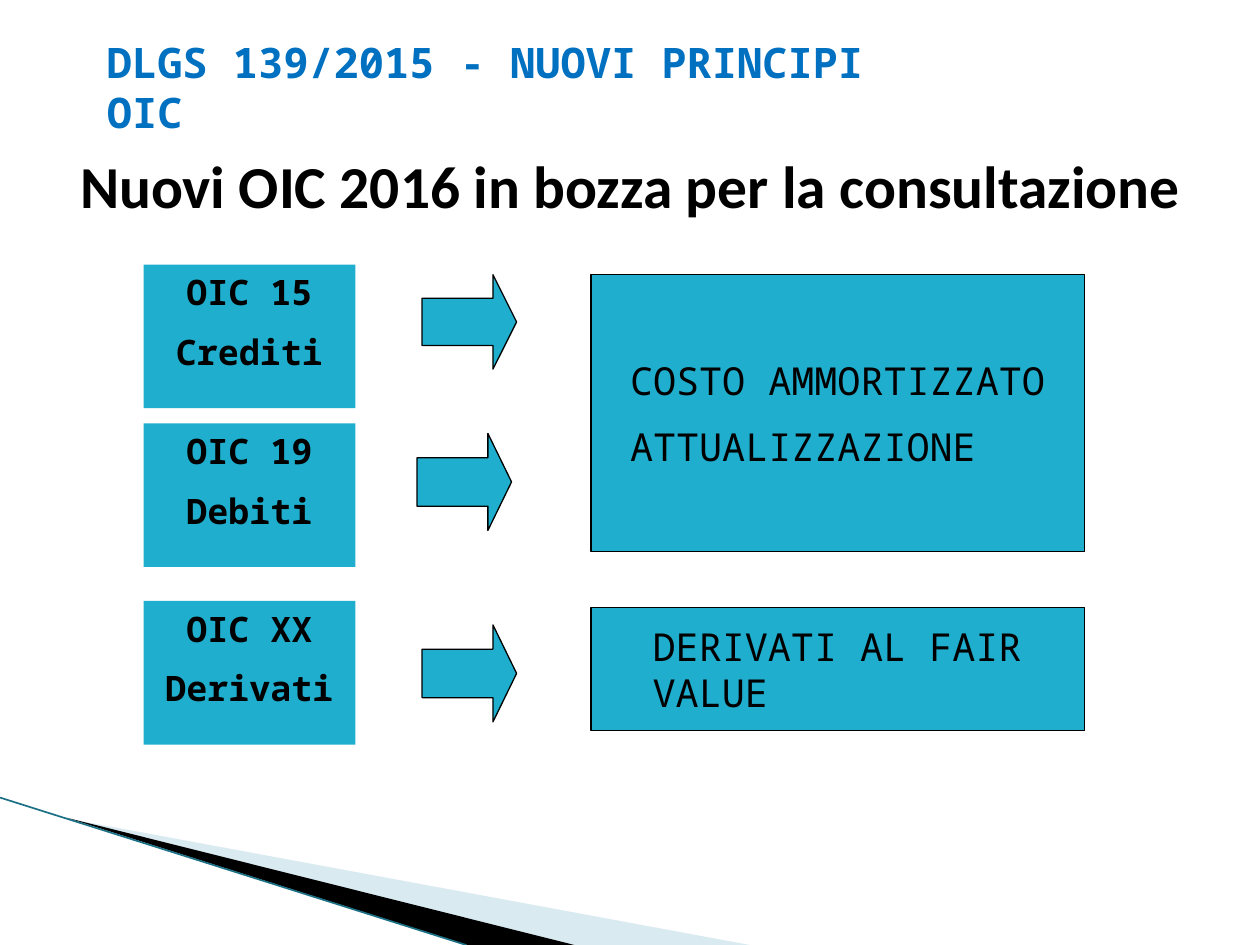
import lxml.etree
import pptx
import pptx.dml.color
import pptx.enum.shapes
import pptx.enum.text
import pptx.oxml.ns
import pptx.util

COLOURS = {
    "teal": "1FAECD",
    "black": "000000",
    "heading": "0070C0",
    "pale": "A0CBDC",
    "edge": "1B7085",
}
MONO = "Noto Sans Mono"
SHAPES = pptx.enum.shapes.MSO_SHAPE
ALIGN = pptx.enum.text.PP_ALIGN
ANCHOR = pptx.enum.text.MSO_ANCHOR

deck = pptx.Presentation()
deck.slide_width = pptx.util.Inches(10)
deck.slide_height = pptx.util.Inches(7.5)
page = deck.slides.add_slide(deck.slide_layouts[6])
column = deck.slide_width / 100
row = deck.slide_height / 75


def paint(shape, fill, line=None):
    shape.shadow.inherit = False
    shape.fill.solid()
    shape.fill.fore_color.rgb = pptx.dml.color.RGBColor.from_string(COLOURS[fill])
    if line:
        shape.line.color.rgb = pptx.dml.color.RGBColor.from_string(COLOURS[line])
        shape.line.width = pptx.util.Pt(0.75)
    else:
        shape.line.fill.background()


def write(shape, lines, size, name=MONO, bold=True, colour="black",
          align=ALIGN.LEFT, anchor=ANCHOR.MIDDLE, indent=1):
    frame = shape.text_frame
    layout = {"word_wrap": True, "vertical_anchor": anchor,
              "margin_left": round(indent * column)}
    for key, value in layout.items():
        setattr(frame, key, value)
    font_format = {"size": pptx.util.Pt(size), "name": name, "bold": bold}
    for index, line in enumerate(lines):
        para = frame.add_paragraph() if index else frame.paragraphs[0]
        para.alignment = align
        para.space_before = pptx.util.Pt(size / 2 if index else 0)
        span = para.add_run()
        span.text = line
        for key, value in font_format.items():
            setattr(span.font, key, value)
        span.font.color.rgb = pptx.dml.color.RGBColor.from_string(COLOURS[colour])


wedges = [
    ("pale", 40, [(5.5, 65), (59.5, 75), (45.6, 75)]),
    ("black", 100, [(5.3, 64.9), (45.6, 75), (37.1, 75)]),
]
for colour, opacity, corners in wedges:
    points = [(round(x * column), round(y * row)) for x, y in corners]
    builder = page.shapes.build_freeform(*points[0])
    builder.add_line_segments(points[1:], close=True)
    wedge = builder.convert_to_shape()
    paint(wedge, colour)
    if opacity < 100:
        tint = wedge.fill._xPr.find(".//" + pptx.oxml.ns.qn("a:srgbClr"))
        alpha = lxml.etree.SubElement(tint, pptx.oxml.ns.qn("a:alpha"))
        alpha.set("val", str(opacity * 1000))

edge = page.shapes.add_connector(
    pptx.enum.shapes.MSO_CONNECTOR.STRAIGHT,
    0, round(63.3 * row), round(37 * column), deck.slide_height)
edge.line.color.rgb = pptx.dml.color.RGBColor.from_string(COLOURS["edge"])
edge.line.width = pptx.util.Pt(0.95)
lxml.etree.SubElement(edge._element.spPr, pptx.oxml.ns.qn("a:effectLst"))

standards = [
    (21, ["OIC 15", "Crediti"], 33.5, 21.8, 7.5),
    (33.6, ["OIC 19", "Debiti"], 33.1, 34.4, 7.7),
    (47.7, ["OIC XX", "Derivati"], 33.5, 49.6, 7.7),
]
for top, lines, arrow_left, arrow_top, arrow_height in standards:
    box = page.shapes.add_shape(
        SHAPES.RECTANGLE, round(11.4 * column), round(top * row),
        round(16.8 * column), round(11.4 * row))
    paint(box, "teal")
    write(box, lines, 20, align=ALIGN.CENTER, anchor=ANCHOR.TOP)
    arrow = page.shapes.add_shape(
        SHAPES.RIGHT_ARROW, round(arrow_left * column), round(arrow_top * row),
        round(7.5 * column), round(arrow_height * row))
    arrow.adjustments[0] = 0.5
    arrow.adjustments[1] = 0.25
    paint(arrow, "teal", "black")

outcomes = [
    (21.8, 22, 3.1, ["COSTO AMMORTIZZATO", "ATTUALIZZAZIONE"]),
    (48.2, 9.8, 4.9, ["DERIVATI AL FAIR VALUE"]),
]
for top, height, indent, lines in outcomes:
    box = page.shapes.add_shape(
        SHAPES.RECTANGLE, round(46.9 * column), round(top * row),
        round(39.2 * column), round(height * row))
    paint(box, "teal", "black")
    write(box, lines, 22, bold=False, indent=indent)

titles = [
    (7.5, 2.1, 69.3, 9.6, "DLGS 139/2015 - NUOVI PRINCIPI OIC",
     {"size": 24, "colour": "heading"}),
    (0, 8.4, 100, 12.5, "Nuovi OIC 2016 in bozza per la consultazione",
     {"size": 34, "name": "Calibri", "align": ALIGN.CENTER}),
]
for left, top, width, height, title, style in titles:
    box = page.shapes.add_textbox(
        round(left * column), round(top * row),
        round(width * column), round(height * row))
    write(box, [title], **style)

deck.save("out.pptx")
